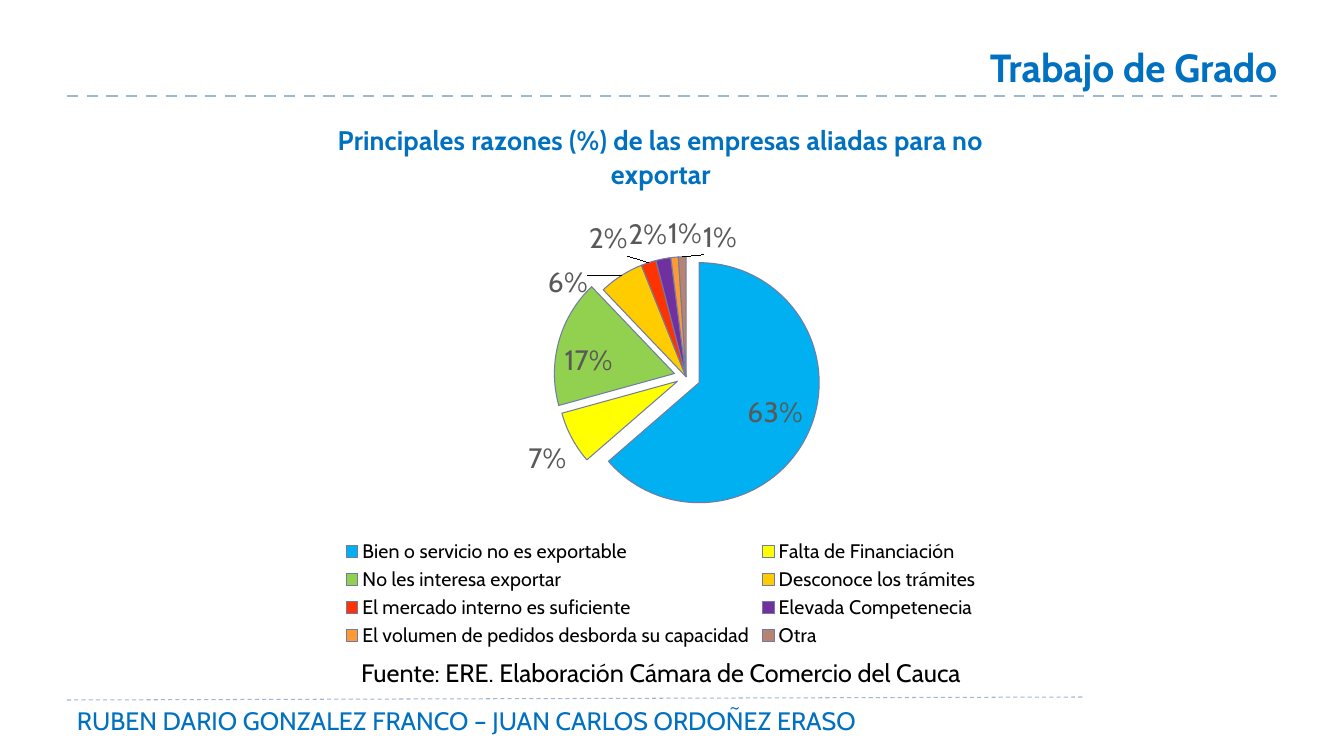
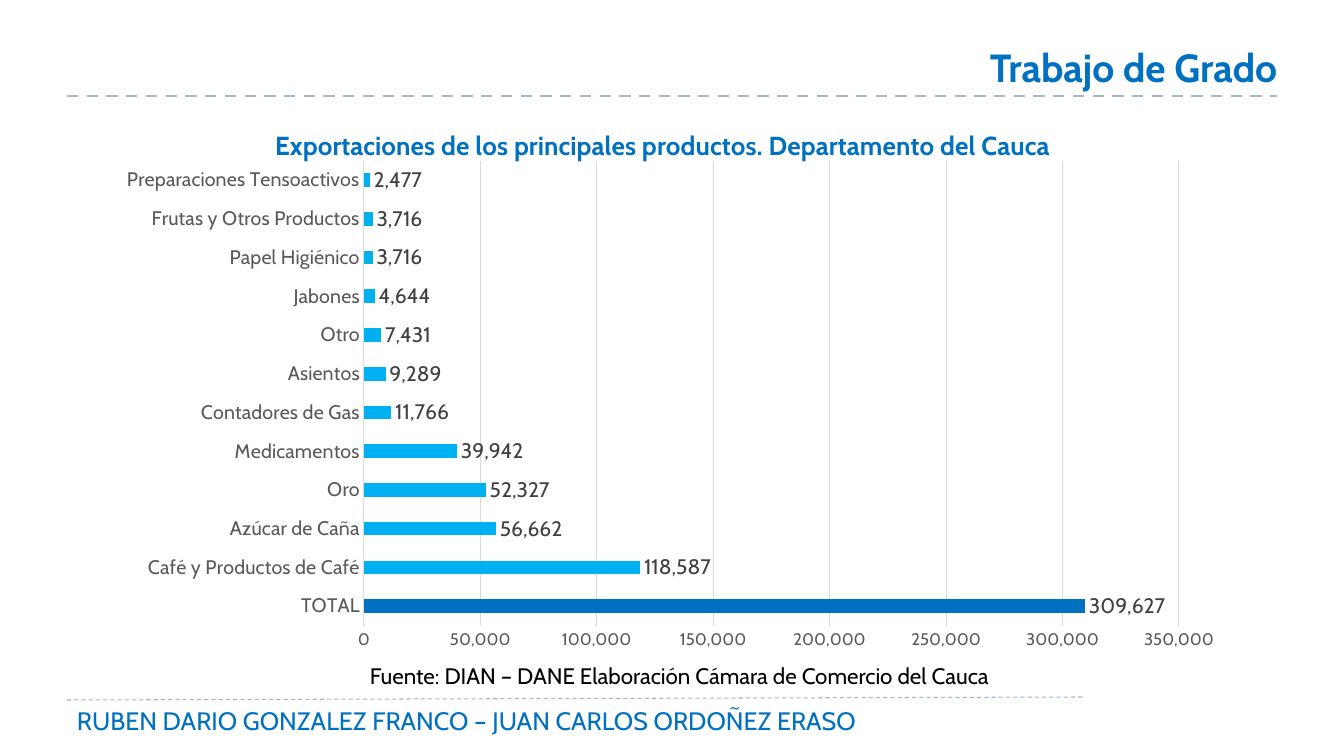
from lxml.etree import SubElement
from pptx import Presentation
from pptx.chart.data import CategoryChartData
from pptx.dml.color import RGBColor
from pptx.enum.chart import XL_CHART_TYPE, XL_LABEL_POSITION, XL_LEGEND_POSITION, XL_TICK_MARK
from pptx.enum.dml import MSO_LINE
from pptx.enum.shapes import MSO_CONNECTOR
from pptx.enum.text import PP_ALIGN
from pptx.oxml import parse_xml
from pptx.oxml.ns import nsdecls, qn
from pptx.util import Pt

PX = 9071  # EMU in one px (100.8 px to the inch)
FONT = "Cabin"
COLORS = {
    "title": "0070C0", "rule": "9FB8CD", "black": "000000", "axis": "595959",
    "grid": "D9D9D9", "value": "404040", "bar": "00B0F0", "slice_edge": "727CA3",
}
SLICES = ["00B0F0", "FFFF00", "92D050", "FFCC00", "FF3300", "7030A0", "FF9933", "B88472"]


def write(target, text=None, size=18, color="black", bold=False, align=PP_ALIGN.LEFT):
    """Format a font, or fill a text frame with one formatted paragraph."""
    font = target
    if text is not None:
        para = target.paragraphs[0]
        para.alignment = align
        span = para.add_run()
        span.text = text
        font = span.font
    font.name, font.size, font.bold = FONT, Pt(size), bold
    font.color.rgb = RGBColor.from_string(COLORS[color])


def manual_layout(edge=True, inner=False, **values):
    """Build a chart layout; without edge, x and y are offsets."""
    target = '<c:layoutTarget val="inner"/>' if inner else ""
    modes = '<c:xMode val="edge"/><c:yMode val="edge"/>' if edge else ""
    numbers = "".join(f'<c:{key} val="{value:.4f}"/>' for key, value in values.items())
    return parse_xml(f'<c:layout {nsdecls("c")}><c:manualLayout>{target}{modes}{numbers}'
                     '</c:manualLayout></c:layout>')


deck = Presentation()
deck.slide_width, deck.slide_height = 1344 * PX, 756 * PX

# Content of the two pages
pages = [
    {
        "type": XL_CHART_TYPE.PIE,
        "place": (213, 100, 896, 552),
        "title": "Principales razones (%) de las empresas aliadas para no exportar",
        "title_size": 19.2,
        "title_at": None,
        "plot": {"x": 0.394, "y": 0.284, "w": 0.268, "h": 0.435},
        "values": {
            "Bien o servicio no es exportable": 63,
            "Falta de Financiación": 7,
            "No les interesa exportar": 17,
            "Desconoce los trámites": 6,
            "El mercado interno es suficiente": 2,
            "Elevada Competenecia": 2,
            "El volumen de pedidos desborda su capacidad": 1,
            "Otra": 1,
        },
        "number_format": '0"%"',
        "source": "Fuente: ERE. Elaboración Cámara de Comercio del Cauca",
        "source_place": (227, 652, 868, 40),
        "source_size": 18,
    },
    {
        "type": XL_CHART_TYPE.BAR_CLUSTERED,
        "place": (96, 104, 1140, 652),
        "title": "Exportaciones de los principales productos. Departamento del Cauca",
        "title_size": 18.6,
        "title_at": {"x": 0.153, "y": 0.028},
        "plot": {"x": 0.235, "y": 0.087, "w": 0.715, "h": 0.713},
        "values": {
            "TOTAL": 309627,
            "Café y Productos de Café": 118587,
            "Azúcar de Caña": 56662,
            "Oro": 52327,
            "Medicamentos": 39942,
            "Contadores de Gas": 11766,
            "Asientos": 9289,
            "Otro": 7431,
            "Jabones": 4644,
            "Papel Higiénico": 3716,
            "Frutas y Otros Productos": 3716,
            "Preparaciones Tensoactivos": 2477,
        },
        "number_format": "#,##0",
        "source": "Fuente: DIAN – DANE Elaboración Cámara de Comercio del Cauca",
        "source_place": (269, 657, 821, 37),
        "source_size": 16,
    },
]

# Parts that every page shares
rules = [((67, 700, 1083, 697), 0.75), ((67, 96, 1277, 96), 2)]
shared_texts = [
    ((67, 700, 1001, 40), "RUBEN DARIO GONZALEZ FRANCO – JUAN CARLOS ORDOÑEZ ERASO",
     {"color": "title"}),
    ((880, 38, 407, 57), "Trabajo de Grado",
     {"size": 28, "color": "title", "bold": True, "align": PP_ALIGN.RIGHT}),
]

charts = []
for page in pages:
    slide = deck.slides.add_slide(deck.slide_layouts[6])

    # Dashed rules
    for ends, width in rules:
        rule = slide.shapes.add_connector(MSO_CONNECTOR.STRAIGHT, *[n * PX for n in ends])
        rule.line.color.rgb = RGBColor.from_string(COLORS["rule"])
        rule.line.width = Pt(width)
        rule.line.dash_style = MSO_LINE.DASH
        SubElement(rule._element.spPr, qn("a:effectLst"))

    # Chart with its title, plot area and value labels
    data = CategoryChartData()
    data.categories = list(page["values"])
    data.add_series("Series 1", list(page["values"].values()))
    place = [n * PX for n in page["place"]]
    chart = slide.shapes.add_chart(page["type"], *place, data).chart
    write(chart.font, size=10)
    chart.has_legend = False
    write(chart.chart_title.text_frame, page["title"], size=page["title_size"],
          color="title", bold=True, align=PP_ALIGN.CENTER)
    chart.chart_title.include_in_layout = False
    chart_element = chart.element.find(qn("c:chart"))
    title = chart_element.find(qn("c:title"))
    plot_area = chart_element.find(qn("c:plotArea"))
    for parent in (title, plot_area):
        for old_layout in parent.findall(qn("c:layout")):
            parent.remove(old_layout)
    if page["title_at"]:
        title.find(qn("c:tx")).addnext(manual_layout(**page["title_at"]))
    plot_area.insert(0, manual_layout(inner=True, **page["plot"]))
    chart_element.addnext(parse_xml(
        f'<c:spPr {nsdecls("c", "a")}><a:noFill/><a:ln><a:noFill/></a:ln></c:spPr>'))
    labels = chart.plots[0].series[0].data_labels
    labels.show_value = True
    labels.number_format, labels.number_format_is_linked = page["number_format"], False
    charts.append(chart)

    # Source line and shared texts
    source = (page["source_place"], page["source"],
              {"size": page["source_size"], "align": PP_ALIGN.CENTER})
    for place, text, text_format in [*shared_texts, source]:
        box = slide.shapes.add_textbox(*[n * PX for n in place])
        box.text_frame.word_wrap = True
        write(box.text_frame, text, **text_format)

pie, bars = charts

# Pie: legend, slices and labels
pie.has_legend = True
pie.legend.position = XL_LEGEND_POSITION.BOTTOM
pie.legend.include_in_layout = False
write(pie.legend.font, size=14)
pie.plots[0].vary_by_categories = True
reasons = pie.plots[0].series[0]
write(reasons.data_labels.font, size=20, color="axis")

explosions = {0: 12, 1: 8, 2: 10}
label_shifts = {3: (-30, 29), 4: (-19, -1), 5: (5, -1), 6: (28, -1), 7: (38, 4)}
chart_width, chart_height = pages[0]["place"][2:]
for index, color in enumerate(SLICES):
    point = reasons.points[index]
    point.format.fill.solid()
    point.format.fill.fore_color.rgb = RGBColor.from_string(color)
    point.format.line.color.rgb = RGBColor.from_string(COLORS["slice_edge"])
    point.format.line.width = Pt(0.75)
    inside = index in (0, 2)
    write(point.data_label.font, size=20, color="axis")
    point.data_label.position = (
        XL_LABEL_POSITION.INSIDE_END if inside else XL_LABEL_POSITION.OUTSIDE_END)

for slice_element in reasons._element.findall(qn("c:dPt")):
    index_element = slice_element.find(qn("c:idx"))
    index = int(index_element.get("val"))
    if index in explosions:
        index_element.addnext(parse_xml(
            f'<c:explosion {nsdecls("c")} val="{explosions[index]}"/>'))

for label in reasons._element.find(qn("c:dLbls")).findall(qn("c:dLbl")):
    index_element = label.find(qn("c:idx"))
    label_format = parse_xml(f'<c:numFmt {nsdecls("c")} sourceLinked="0"/>')
    label_format.set("formatCode", pages[0]["number_format"])
    index_element.addnext(label_format)
    index = int(index_element.get("val"))
    if index in label_shifts:
        right, down = label_shifts[index]
        index_element.addnext(manual_layout(
            edge=False, x=right / chart_width, y=down / chart_height))

# Bars: the total stands out in a darker blue
plot = bars.plots[0]
plot.gap_width = 182
plot.vary_by_categories = False
exports = plot.series[0]
for part, color in [(exports, "bar"), (exports.points[0], "title")]:
    part.format.fill.solid()
    part.format.fill.fore_color.rgb = RGBColor.from_string(COLORS[color])
exports.data_labels.position = XL_LABEL_POSITION.OUTSIDE_END
write(exports.data_labels.font, size=15, color="value")

# Axes of the bar chart
for axis, size in [(bars.category_axis, 14), (bars.value_axis, 12)]:
    axis.major_tick_mark = axis.minor_tick_mark = XL_TICK_MARK.NONE
    write(axis.tick_labels.font, size=size, color="axis")
value_axis = bars.value_axis
value_axis.minimum_scale, value_axis.maximum_scale = 0, 350000
value_axis.major_unit = 50000
value_axis.tick_labels.number_format = "#,##0"
value_axis.tick_labels.number_format_is_linked = False
value_axis.format.line.fill.background()
value_axis.has_major_gridlines = True
bars.category_axis.has_major_gridlines = False
for line in (value_axis.major_gridlines.format.line, bars.category_axis.format.line):
    line.color.rgb = RGBColor.from_string(COLORS["grid"])
    line.width = Pt(0.75)

deck.save("out.pptx")
